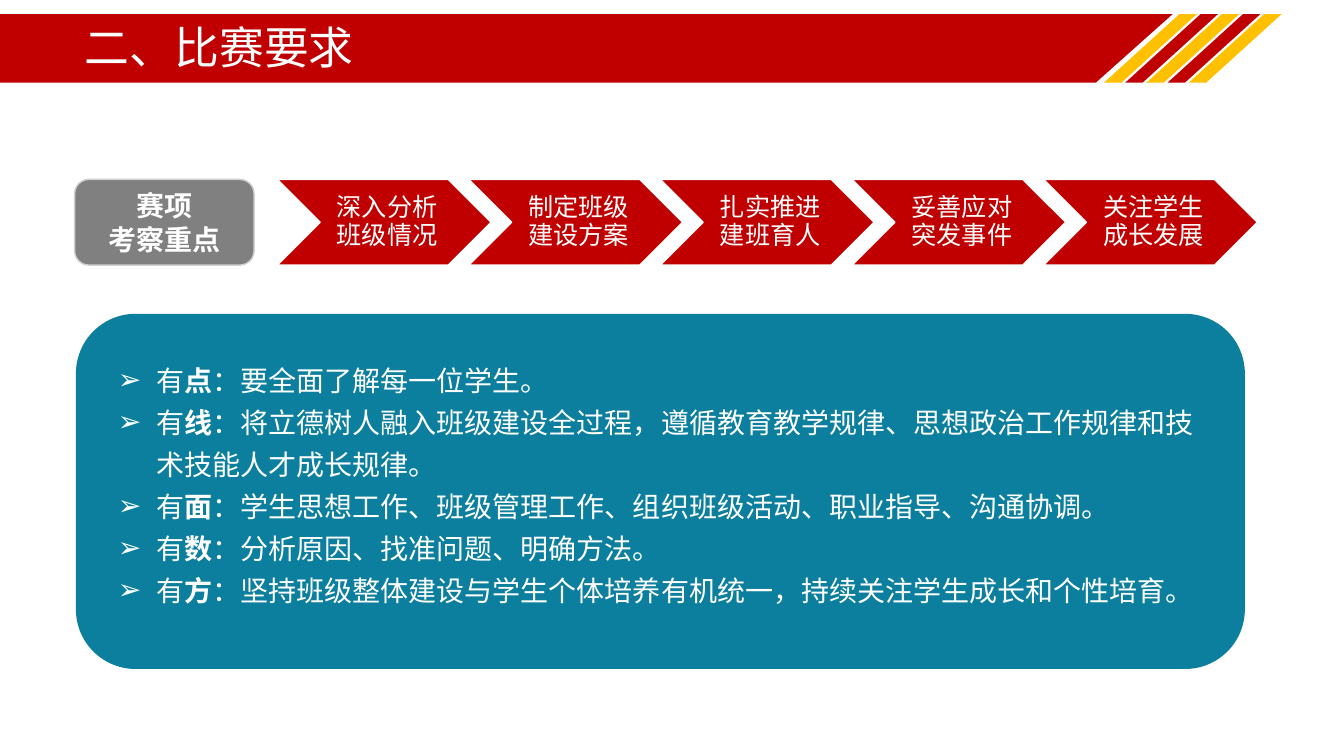
import pptx
import pptx.dml.color
import pptx.enum.shapes
import pptx.enum.text
import pptx.oxml.ns
import pptx.util
from lxml import etree

Inches = pptx.util.Inches
Pt = pptx.util.Pt
RGBColor = pptx.dml.color.RGBColor
Shape = pptx.enum.shapes.MSO_SHAPE
Align = pptx.enum.text.PP_ALIGN
Anchor = pptx.enum.text.MSO_ANCHOR
qn = pptx.oxml.ns.qn

WHITE = RGBColor(0xFF, 0xFF, 0xFF)
RED = RGBColor(0xC0, 0x00, 0x00)
GOLD = RGBColor(0xFF, 0xC0, 0x00)
TEAL = RGBColor(0x0C, 0x7F, 0x9E)
GRAY = RGBColor(0x80, 0x80, 0x80)
SILVER = RGBColor(0xD0, 0xCE, 0xCE)

STEPS = ["深入分析班级情况", "制定班级建设方案", "扎实推进建班育人",
         "妥善应对突发事件", "关注学生成长发展"]
POINTS = [
    ("点", "要全面了解每一位学生。"),
    ("线", "将立德树人融入班级建设全过程，遵循教育教学规律、思想政治工作规律和技术技能人才成长规律。"),
    ("面", "学生思想工作、班级管理工作、组织班级活动、职业指导、沟通协调。"),
    ("数", "分析原因、找准问题、明确方法。"),
    ("方", "坚持班级整体建设与学生个体培养有机统一，持续关注学生成长和个性培育。"),
]


class CompetitionSlide:
    """Draws the elements of the competition requirements slide in one style."""

    latin = "Roboto"
    chinese = "Noto Sans CJK SC"

    def __init__(self, deck):
        self.page = deck.slides.add_slide(deck.slide_layouts[5])

    def style(self, para, size, font=None, bold=False, align=Align.LEFT, spacing=None):
        para.alignment = align
        para.line_spacing = spacing
        para.font.name = font or self.latin
        para.font.size = Pt(size)
        para.font.bold = bold
        para.font.color.rgb = WHITE
        defaults = para._p.pPr.find(qn("a:defRPr"))
        latin = defaults.find(qn("a:latin"))
        east_asian = etree.Element(qn("a:ea"), typeface=self.chinese)
        latin.addnext(east_asian)

    def shape(self, kind, left, top, width, height, fill, line=None, slant=None):
        shape = self.page.shapes.add_shape(
            kind, Inches(left), Inches(top), Inches(width), Inches(height))
        shape.shadow.inherit = False
        shape.fill.solid()
        shape.fill.fore_color.rgb = fill
        if line is None:
            shape.line.fill.background()
        else:
            shape.line.color.rgb = line
            shape.line.width = Pt(1)
        if slant is not None:
            shape.adjustments[0] = slant
        return shape

    def title(self, text):
        box = self.page.shapes.title
        box.left, box.top = Inches(0.74), Inches(0.37)
        box.width, box.height = Inches(11.5), Inches(0.26)
        frame = box.text_frame
        frame.text = text
        frame.auto_size = pptx.enum.text.MSO_AUTO_SIZE.NONE
        frame.vertical_anchor = Anchor.MIDDLE
        self.style(frame.paragraphs[0], 32, spacing=0.9)
        self.page.shapes._spTree.append(box._element)

    def label(self, shape, lines, size, bold=False, spacing=None, margins=None):
        frame = shape.text_frame
        frame.word_wrap = True
        frame.vertical_anchor = Anchor.MIDDLE
        if margins:
            frame.margin_left, frame.margin_right = map(Inches, margins)
            frame.margin_top = frame.margin_bottom = Inches(0.03)
        frame.text = "\n".join(lines)
        for para in frame.paragraphs:
            self.style(para, size, bold=bold, align=Align.CENTER, spacing=spacing)

    def bullet(self, para):
        properties = para._p.get_or_add_pPr()
        properties.set("marL", str(Inches(0.38)))
        properties.set("indent", str(-Inches(0.38)))
        color = etree.SubElement(properties, qn("a:buClr"))
        etree.SubElement(color, qn("a:srgbClr"), val=str(WHITE))
        etree.SubElement(properties, qn("a:buFont"), typeface="Arial")
        etree.SubElement(properties, qn("a:buChar"), char="➢")

    def points(self, items, left, top, width, height):
        box = self.page.shapes.add_textbox(
            Inches(left), Inches(top), Inches(width), Inches(height))
        frame = box.text_frame
        frame.word_wrap = True
        for index, (keyword, detail) in enumerate(items):
            para = frame.add_paragraph() if index else frame.paragraphs[0]
            self.bullet(para)
            self.style(para, 20, font=self.chinese, spacing=Pt(30))
            for text in ("有", keyword, "：" + detail):
                span = para.add_run()
                span.text = text
                span.font.bold = text == keyword


def main():
    deck = pptx.Presentation()
    deck.slide_width, deck.slide_height = Inches(13.33), Inches(7.5)
    slide = CompetitionSlide(deck)

    slide.shape(Shape.PARALLELOGRAM, -0.91, 0.14, 12.54, 0.68, RED, slant=1.12)
    for index in range(5):
        slide.shape(Shape.PARALLELOGRAM, 10.95 + 0.21 * index, 0.14, 0.92, 0.68,
                    RED if index % 2 else GOLD, slant=1.1)
    slide.title("二、比赛要求")

    for index, step in enumerate(STEPS):
        arrow = slide.shape(Shape.CHEVRON, 2.75 + 1.9 * index, 1.78, 2.12, 0.85,
                            RED, WHITE, slant=0.5)
        slide.label(arrow, [step], 18, spacing=0.9, margins=(0.08, 0.02))

    slide.shape(Shape.ROUNDED_RECTANGLE, 0.76, 3.12, 11.58, 3.51, TEAL, TEAL)
    slide.points(POINTS, 1.07, 3.47, 10.93, 2.59)
    focus = slide.shape(Shape.ROUNDED_RECTANGLE, 0.74, 1.78, 1.78, 0.85, GRAY, SILVER)
    slide.label(focus, ["赛项", "考察重点"], 20, bold=True)

    deck.save("out.pptx")


if __name__ == "__main__":
    main()
